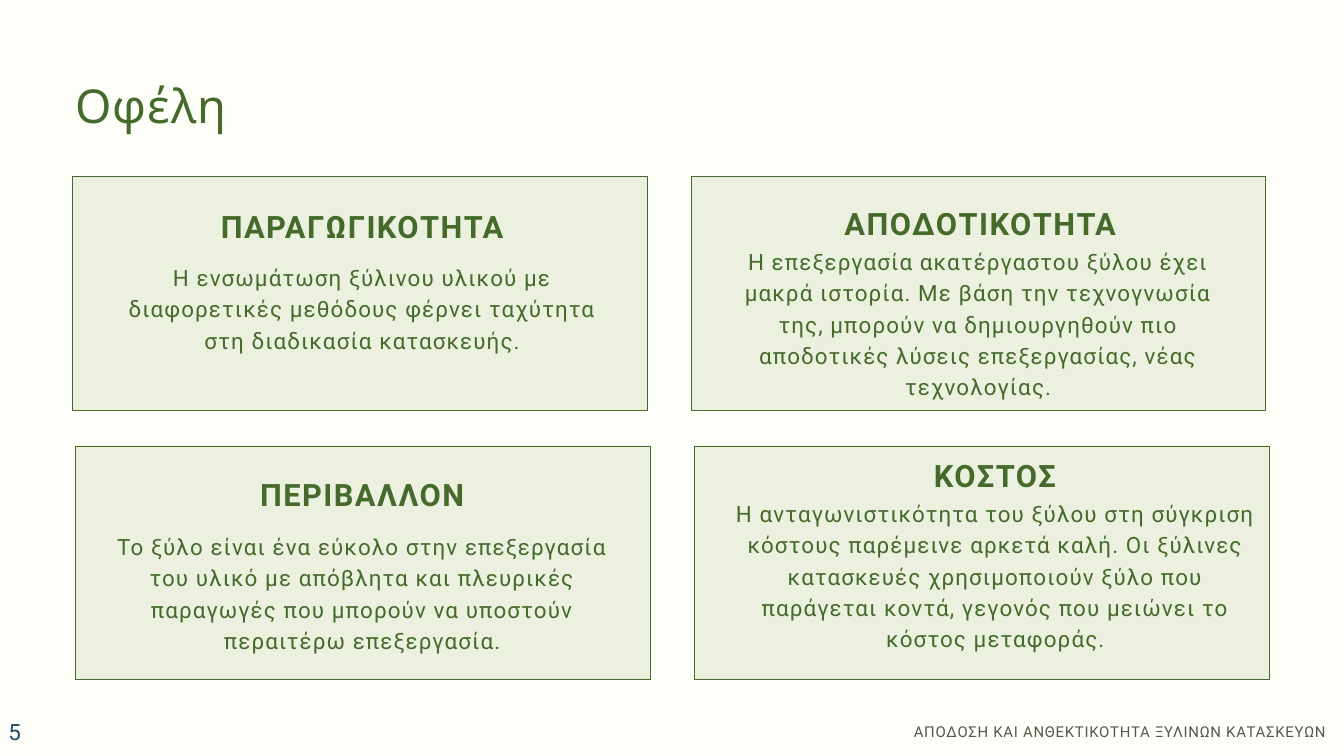
import pptx
import pptx.util
import pptx.dml.color
import pptx.enum.shapes
import pptx.enum.text

PX = 9525  # EMU per px, 96 px to the inch
COLORS = {"paper": "FEFFF8", "green": "456A2C", "card": "EBF1DE",
          "grey": "52584D", "navy": "1E4D65"}
ALIGN = pptx.enum.text.PP_ALIGN
ANCHOR = pptx.enum.text.MSO_ANCHOR
CARD_W, CARD_H = 821, 334
HEAD_W, HEAD_H = 709, 55


class Deck:
    def __init__(self, width, height):
        self.prs = pptx.Presentation()
        self.prs.slide_width, self.prs.slide_height = self.emu(width, height)
        self.s = self.prs.slides.add_slide(self.prs.slide_layouts[6])
        self.fill(self.s.background.fill, "paper")

    def emu(self, *lengths):
        return [pptx.util.Emu(n * PX) for n in lengths]

    def rgb(self, name):
        return pptx.dml.color.RGBColor.from_string(COLORS[name])

    def fill(self, fill, color):
        fill.solid()
        fill.fore_color.rgb = self.rgb(color)

    def text(self, box, text, size, color="green", font="Roboto", bold=False,
             align=ALIGN.LEFT, leading=None, spacing=1.2, inset=(0, 0),
             anchor=ANCHOR.TOP):
        tf = self.s.shapes.add_textbox(*self.emu(*box)).text_frame
        tf.word_wrap = True
        tf.vertical_anchor = anchor
        tf.margin_left = tf.margin_right = inset[0] * PX
        tf.margin_top = tf.margin_bottom = inset[1] * PX
        p = tf.paragraphs[0]
        p.text = text
        p.alignment = align
        if leading:
            p.line_spacing = pptx.util.Pt(leading)
        r = p.runs[0]
        r.font.name = font
        r.font.size = pptx.util.Pt(size)
        r.font.bold = bold
        r.font.color.rgb = self.rgb(color)
        r._r.get_or_add_rPr().set("spc", str(round(spacing * 100)))

    def panel(self, x, y):
        sp = self.s.shapes.add_shape(pptx.enum.shapes.MSO_SHAPE.RECTANGLE,
                                     *self.emu(x, y, CARD_W, CARD_H))
        sp.shadow.inherit = False
        self.fill(sp.fill, "card")
        sp.line.color.rgb = self.rgb("green")
        sp.line.width = pptx.util.Pt(0.75)

    def card(self, corner, head_at, heading, body_box, body):
        self.panel(*corner)
        self.text((*head_at, HEAD_W, HEAD_H), heading, 33, bold=True,
                  align=ALIGN.CENTER, leading=41.2, spacing=1.6)
        self.text(body_box, body, 24, align=ALIGN.CENTER, leading=33.6)


# Corner, heading position, heading, body box, body
CARDS = [
    ((108, 637), (163, 677), "ΠΕΡΙΒΑΛΛΟΝ", (163, 755, 709, 181),
     "Το ξύλο είναι ένα εύκολο στην επεξεργασία του υλικό με απόβλητα και "
     "πλευρικές παραγωγές που μπορούν να υποστούν περαιτέρω επεξεργασία."),
    ((104, 252), (163, 294), "ΠΑΡΑΓΩΓΙΚΟΤΗΤΑ", (163, 371, 709, 135),
     "Η ενσωμάτωση ξύλινου υλικού με διαφορετικές μεθόδους φέρνει ταχύτητα "
     "στη διαδικασία κατασκευής."),
    ((987, 252), (1046, 291), "ΑΠΟΔΟΤΙΚΟΤΗΤΑ", (1043, 348, 709, 228),
     "Η επεξεργασία ακατέργαστου ξύλου έχει μακρά ιστορία. Με βάση την "
     "τεχνογνωσία της, μπορούν να δημιουργηθούν πιο αποδοτικές λύσεις "
     "επεξεργασίας, νέας τεχνολογίας."),
    ((992, 637), (1067, 650), "ΚΟΣΤΟΣ", (1039, 708, 766, 228),
     "Η ανταγωνιστικότητα του ξύλου στη σύγκριση κόστους παρέμεινε αρκετά "
     "καλή. Οι ξύλινες κατασκευές χρησιμοποιούν ξύλο που παράγεται κοντά, "
     "γεγονός που μειώνει το κόστος μεταφοράς."),
]


def main():
    deck = Deck(1920, 1080)

    # Footer and title
    deck.text((1096, 1028, 799, 29),
              "ΑΠΟΔΟΣΗ ΚΑΙ ΑΝΘΕΚΤΙΚΟΤΗΤΑ ΞΥΛΙΝΩΝ ΚΑΤΑΣΚΕΥΩΝ", 16, "grey",
              align=ALIGN.RIGHT, leading=22.4, spacing=0.8)
    deck.text((108, 101, 744, 90), "Οφέλη", 50, font="League Spartan",
              leading=66.8, spacing=1)

    # Benefit cards
    for card in CARDS:
        deck.card(*card)

    # Slide number
    deck.text((2, 1026, 224, 38), "5", 24, "navy", inset=(10, 5),
              anchor=ANCHOR.MIDDLE)

    deck.prs.save("out.pptx")


if __name__ == "__main__":
    main()
